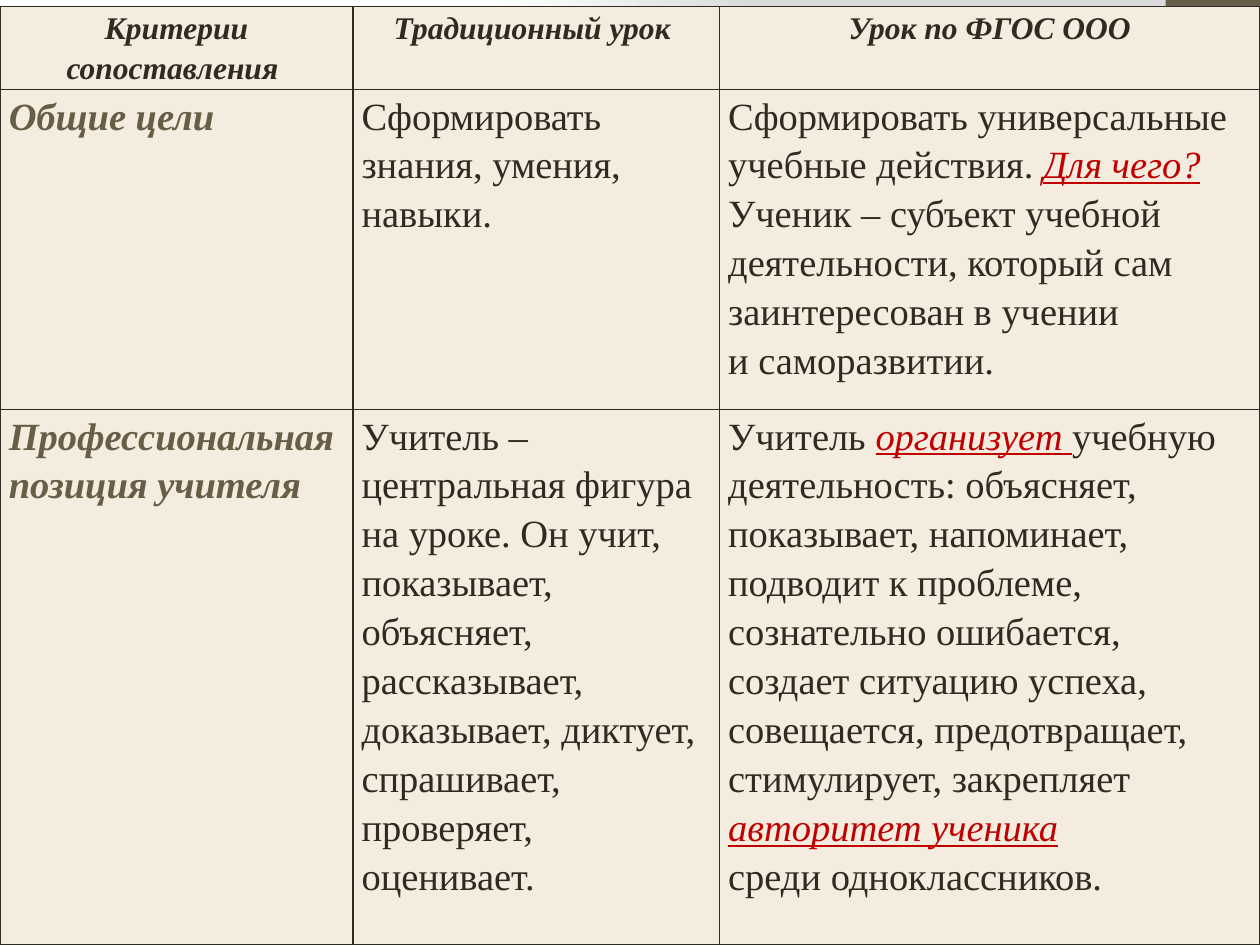
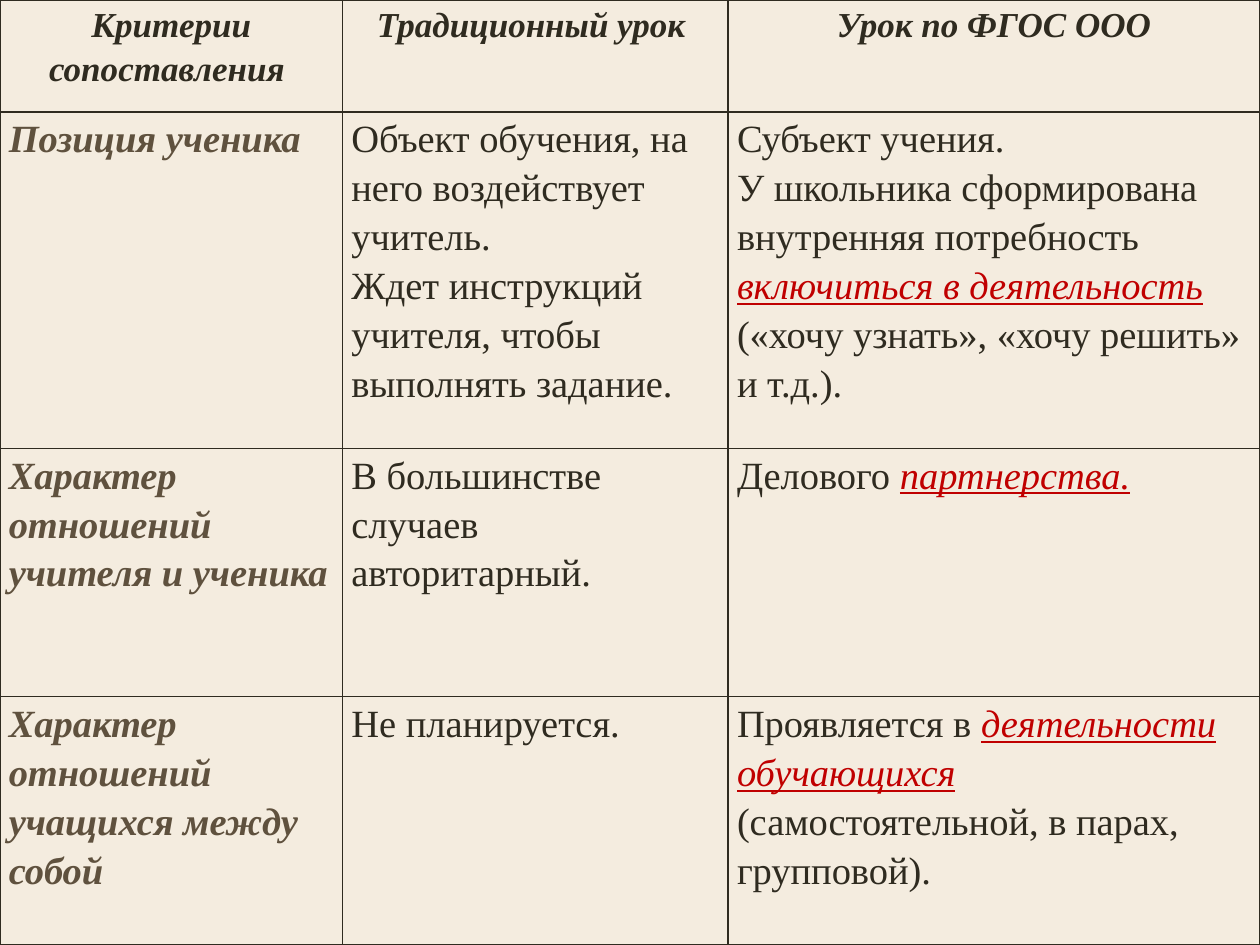
from lxml import etree
from pptx import Presentation
from pptx.dml.color import RGBColor
from pptx.enum.shapes import MSO_SHAPE
from pptx.enum.text import PP_ALIGN
from pptx.oxml import parse_xml
from pptx.oxml.ns import nsdecls, qn
from pptx.util import Inches, Pt

RECTANGLE = MSO_SHAPE.RECTANGLE
CENTER, LEFT = PP_ALIGN.CENTER, PP_ALIGN.LEFT

INK = RGBColor(0x2F, 0x2B, 0x20)
OLIVE = RGBColor(0x67, 0x5E, 0x47)
BROWN = RGBColor(0x5F, 0x51, 0x3E)
SAGE = RGBColor(0xA9, 0xA5, 0x7C)
CREAM = RGBColor(0xF4, 0xEC, 0xDF)
RED = RGBColor(0xC0, 0x00, 0x00)
BACKGROUND_STOPS = ((0, "FFFFFF"), (75, "FFFFFF"), (100, "DADADA"))

FONT = "Times New Roman"
BODY_SIZE = 22
MARGINS = {"margin_left": Inches(0.07), "margin_right": Inches(0.07),
           "margin_top": 0, "margin_bottom": 0}
HEADINGS = ("Критерии сопоставления ", "Традиционный урок ", "Урок по ФГОС ООО")

# Asterisks enclose emphasised words; line breaks separate paragraphs.
GOALS_AND_TEACHER = (
    ("Общие цели",
     "Сформировать знания, умения, навыки.",
     "Сформировать универсальные учебные действия. *Для чего?*\n"
     "Ученик – субъект учебной\n"
     "деятельности, который сам\n"
     "заинтересован в учении\n"
     "и саморазвитии."),
    ("Профессиональная позиция учителя",
     "Учитель – центральная фигура на уроке. Он учит, показывает, объясняет, "
     "рассказывает, доказывает, диктует, спрашивает, проверяет, оценивает.",
     "Учитель *организует *учебную деятельность: объясняет, показывает, "
     "напоминает, подводит к проблеме, сознательно ошибается, создает ситуацию "
     "успеха, совещается, предотвращает, стимулирует, закрепляет "
     "*авторитет ученика*\n"
     "среди одноклассников."),
)
PUPIL_AND_RELATIONS = (
    ("Позиция ученика",
     "Объект обучения, на него воздействует учитель.\n"
     "Ждет инструкций учителя, чтобы выполнять задание.",
     "Субъект учения.\n"
     "У школьника сформирована\n"
     "внутренняя потребность\n"
     "*включиться в деятельность*\n"
     "(«хочу узнать», «хочу решить» и т.д.)."),
    ("Характер отношений учителя и ученика",
     "В большинстве случаев авторитарный.",
     "Делового *партнерства.*"),
    ("Характер отношений учащихся между собой",
     "Не планируется.",
     "Проявляется в *деятельности обучающихся *"
     "(самостоятельной, в парах, групповой)."),
)


def set_values(target, values):
    for name, value in values.items():
        setattr(target, name, value)


def paint_background(page):
    page.background.fill.gradient()
    gradient = page._element.find(".//" + qn("a:gradFill"))
    for child in list(gradient):
        gradient.remove(child)
    stops = "".join(f'<a:gs pos="{position * 1000}"><a:srgbClr val="{color}"/></a:gs>'
                    for position, color in BACKGROUND_STOPS)
    gradient.append(parse_xml(f'<a:gsLst {nsdecls("a")}>{stops}</a:gsLst>'))
    gradient.append(parse_xml(
        f'<a:path {nsdecls("a")} path="circle">'
        '<a:fillToRect l="20000" t="50000" r="100000" b="50000"/></a:path>'))


def add_band(page, top, height, color):
    band = page.shapes.add_shape(RECTANGLE, Inches(9.25), Inches(top),
                                 Inches(0.75), Inches(height))
    band.shadow.inherit = False
    band.fill.solid()
    band.fill.fore_color.rgb = color
    band.line.fill.background()


def add_page(deck):
    page = deck.slides.add_slide(deck.slide_layouts[6])
    paint_background(page)
    add_band(page, 0, 7.5, OLIVE)
    add_band(page, 6, 0.75, SAGE)
    return page


def add_borders(cell):
    properties = cell._tc.get_or_add_tcPr()
    for index, side in enumerate(("lnL", "lnR", "lnT", "lnB")):
        line = etree.Element(qn(f"a:{side}"), w=str(Pt(1)))
        fill = etree.SubElement(line, qn("a:solidFill"))
        etree.SubElement(fill, qn("a:srgbClr"), val=str(INK))
        properties.insert(index, line)


def write_cell(cell, text, size, color, strong, alignment):
    set_values(cell, MARGINS)
    cell.fill.solid()
    cell.fill.fore_color.rgb = CREAM
    add_borders(cell)
    frame = cell.text_frame
    for number, line in enumerate(text.split("\n")):
        para = frame.add_paragraph() if number else frame.paragraphs[0]
        set_values(para, {"alignment": alignment, "line_spacing": 1.15})
        for part, words in enumerate(line.split("*")):
            if not words:
                continue
            accent = part % 2 == 1
            span = para.add_run()
            span.text = words
            set_values(span.font, {"name": FONT, "size": Pt(size), "bold": strong,
                                   "italic": strong or accent, "underline": accent})
            span.font.color.rgb = RED if accent else color


def add_comparison(page, top, widths, heights, rows, heading_size, criterion_color):
    frame = page.shapes.add_table(len(heights), len(widths), 0, Inches(top),
                                  Inches(sum(widths)), Inches(sum(heights)))
    table = frame.table
    set_values(table, {"first_row": False, "horz_banding": False})
    for column, width in zip(table.columns, widths):
        column.width = Inches(width)
    for row, height in zip(table.rows, heights):
        row.height = Inches(height)
    for index, heading in enumerate(HEADINGS):
        write_cell(table.cell(0, index), heading, heading_size, INK, True, CENTER)
    for row_index, row in enumerate(rows, 1):
        for index, text in enumerate(row):
            criterion = index == 0
            write_cell(table.cell(row_index, index), text, BODY_SIZE,
                       criterion_color if criterion else INK, criterion, LEFT)


def main():
    deck = Presentation()
    set_values(deck, {"slide_width": Inches(10), "slide_height": Inches(7.5)})
    add_comparison(add_page(deck), 0.05, (2.8, 2.91, 4.29), (0.66, 2.54, 4.25),
                   GOALS_AND_TEACHER, 18, OLIVE)
    add_comparison(add_page(deck), 0, (2.72, 3.06, 4.22), (0.89, 2.67, 1.97, 1.97),
                   PUPIL_AND_RELATIONS, 20, BROWN)
    deck.save("out.pptx")


if __name__ == "__main__":
    main()
